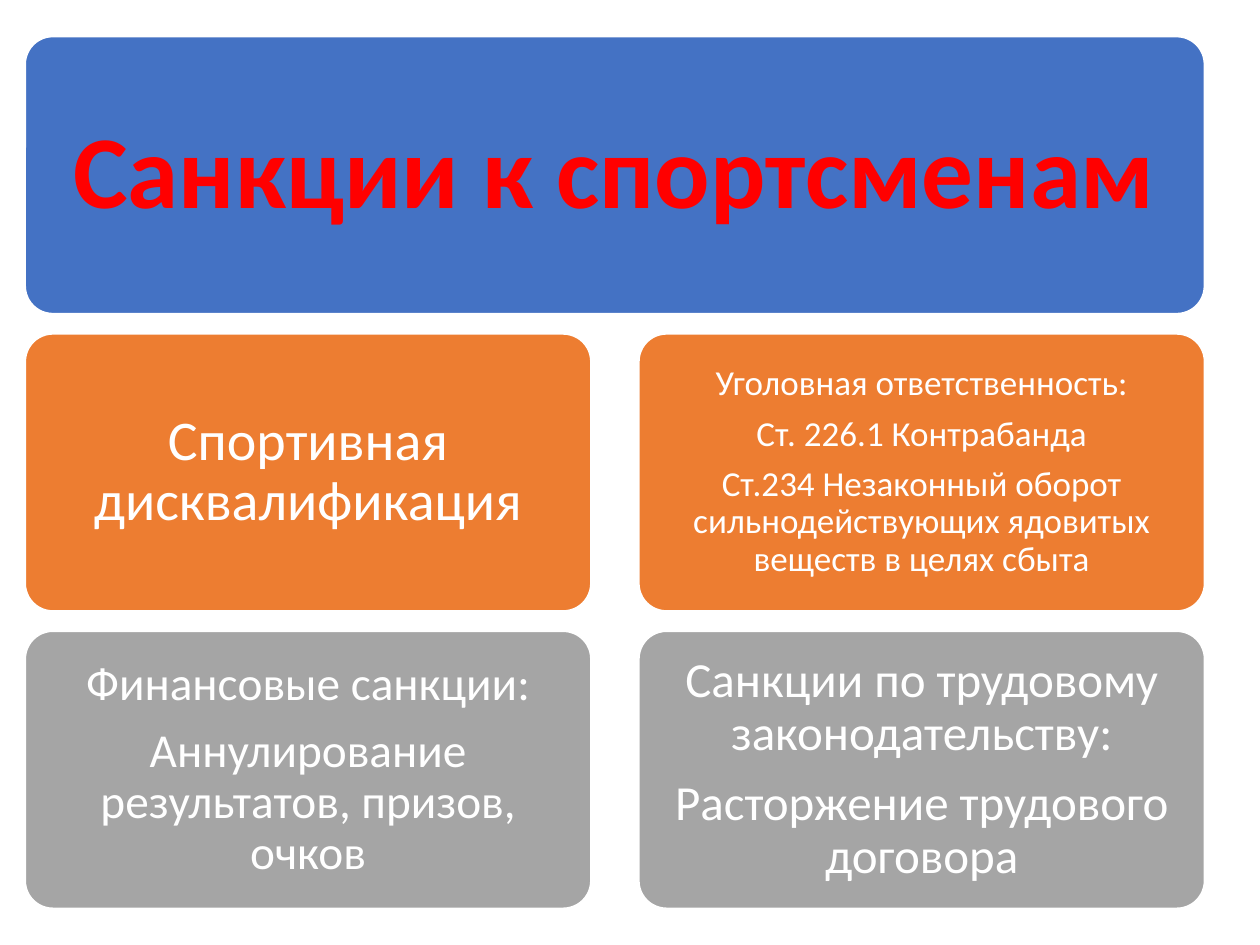
"""Build a slide of sanctions against athletes as a heading card over a two-by-two grid."""
from dataclasses import dataclass
from typing import Any

from pptx import Presentation
from pptx import util as u
from pptx.dml.color import RGBColor
from pptx.enum import shapes, text

COLORS = {"blue": "4472C4", "orange": "ED7D31", "gray": "A5A5A5", "white": "FFFFFF", "red": "FF0000"}
LEFT, TOP, WIDTH, HEIGHT = 0.2, 0.29, 9.36, 2.2
CARD_WIDTH = 4.49
COL_STEP, ROW_STEP = WIDTH - CARD_WIDTH, 2.36
EDGE = 0.06


@dataclass(frozen=True)
class Card:
    row: int
    col: int
    fill: str
    size: int
    inset: float
    lines: tuple[str, ...] = ()
    width: float = CARD_WIDTH


HEADING = Card(0, 0, "blue", 59, 0.25, width=WIDTH)
CARDS = (
    Card(1, 0, "orange", 32, 0.13, ("Спортивная дисквалификация",)),
    Card(2, 0, "gray", 27, 0.11, ("Финансовые санкции:", "Аннулирование результатов, призов, очков")),
    Card(1, 1, "orange", 20, 0.08, (
        "Уголовная ответственность:",
        "Ст. 226.1 Контрабанда",
        "Ст.234 Незаконный оборот сильнодействующих ядовитых веществ в целях сбыта",
    )),
    Card(2, 1, "gray", 28, 0.12, ("Санкции по трудовому законодательству:", "Расторжение трудового договора")),
)


def rgb(name: str) -> RGBColor:
    return RGBColor.from_string(COLORS[name])


def apply(target: Any, values: dict[str, Any]) -> None:
    for name, value in values.items():
        setattr(target, name, value)


def write(tf: Any, lines: tuple[str, ...], size: int, inset: float, color: str, bold: bool = False) -> None:
    margins = {f"margin_{side}": u.Inches(inset) for side in ("left", "top", "right", "bottom")}
    apply(tf, {"word_wrap": True, "auto_size": text.MSO_AUTO_SIZE.NONE,
               "vertical_anchor": text.MSO_ANCHOR.MIDDLE, **margins})
    for i, line in enumerate(lines):
        p = tf.add_paragraph() if i else tf.paragraphs[0]
        apply(p, {"alignment": text.PP_ALIGN.CENTER, "line_spacing": 0.9,
                  "space_before": u.Pt(0), "space_after": u.Pt(round(0.35 * size, 2))})
        r = p.add_run()
        r.text = line
        apply(r.font, {"name": "Calibri", "size": u.Pt(size), "bold": bold})
        r.font.color.rgb = rgb(color)


def draw_card(s: Any, card: Card) -> Any:
    sp = s.shapes.add_shape(
        shapes.MSO_SHAPE.ROUNDED_RECTANGLE,
        u.Inches(LEFT + card.col * COL_STEP), u.Inches(TOP + card.row * ROW_STEP),
        u.Inches(card.width), u.Inches(HEIGHT))
    sp.adjustments[0] = 0.1
    sp.shadow.inherit = False
    sp.fill.solid()
    sp.fill.fore_color.rgb = rgb(card.fill)
    sp.line.color.rgb = rgb("white")
    sp.line.width = u.Pt(1)
    if card.lines:
        write(sp.text_frame, card.lines, card.size, card.inset, "white")
    return sp


def draw_heading(s: Any, heading: str) -> None:
    sp = draw_card(s, HEADING)
    title = s.shapes.title
    sp.element.addnext(title.element)
    apply(title, {"left": u.Inches(LEFT + EDGE), "top": u.Inches(TOP + EDGE),
                  "width": u.Inches(WIDTH - 2 * EDGE), "height": u.Inches(HEIGHT - 2 * EDGE)})
    write(title.text_frame, (heading,), HEADING.size, HEADING.inset, "red", bold=True)


def main() -> None:
    prs = Presentation()
    apply(prs, {"slide_width": u.Inches(10), "slide_height": u.Inches(7.5)})
    s = prs.slides.add_slide(prs.slide_layouts[5])
    draw_heading(s, "Санкции к спортсменам")
    for card in CARDS:
        draw_card(s, card)
    prs.save("out.pptx")


if __name__ == "__main__":
    main()
